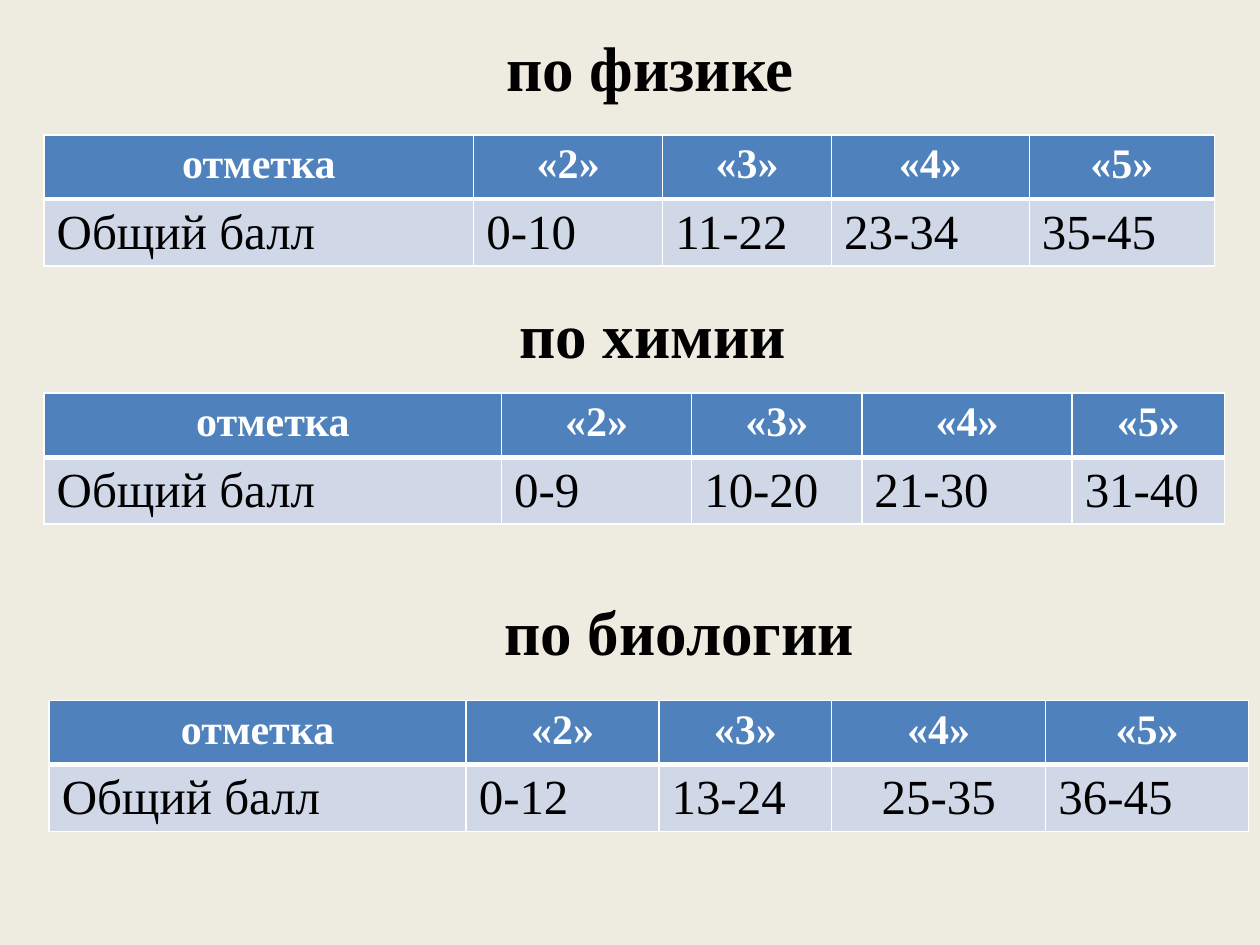
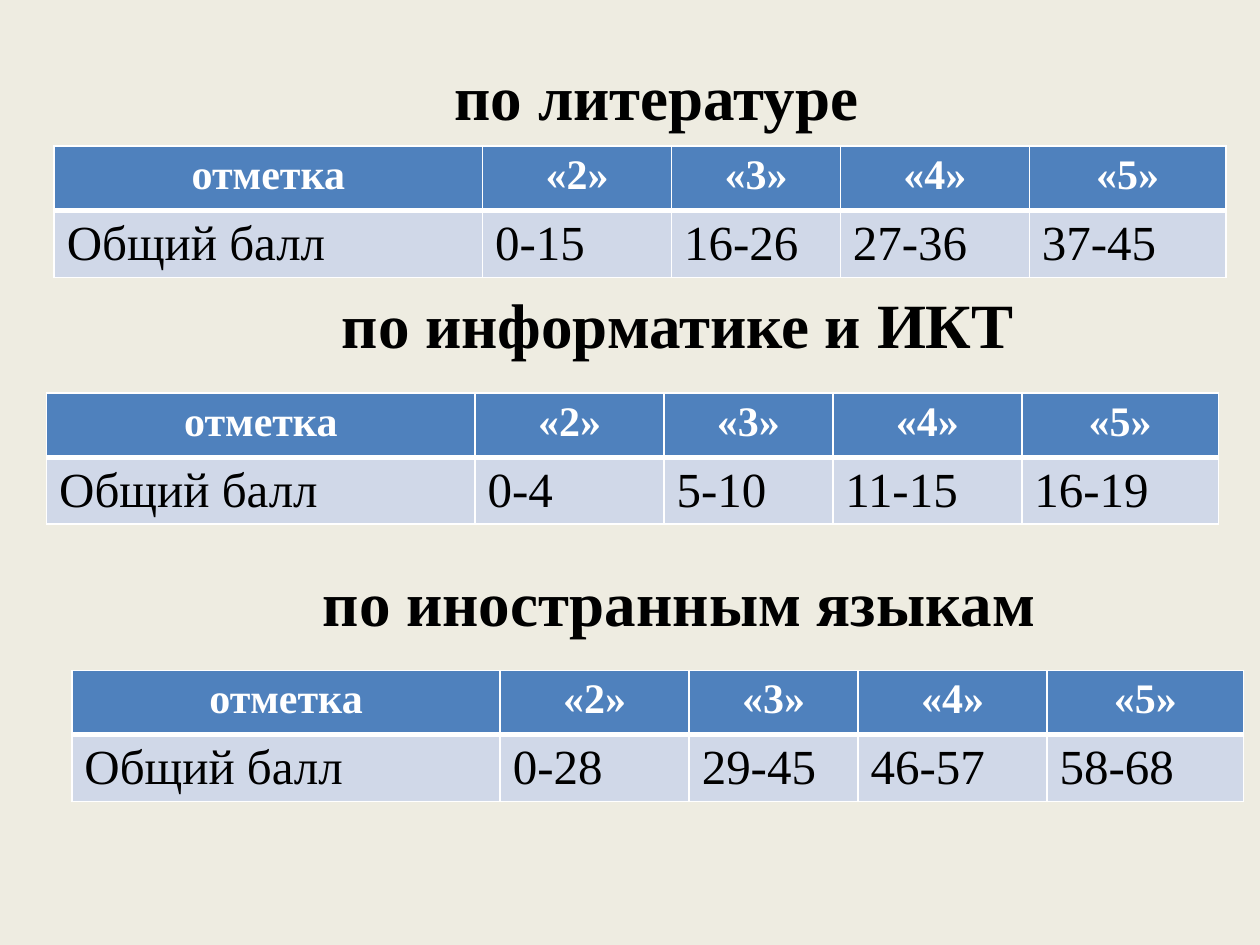
from dataclasses import dataclass

from lxml import etree
from pptx import Presentation
from pptx.dml.color import RGBColor
from pptx.enum.text import MSO_ANCHOR, MSO_AUTO_SIZE, PP_ALIGN
from pptx.oxml.ns import qn
from pptx.shapes.autoshape import Shape
from pptx.slide import Slide
from pptx.table import _Cell
from pptx.text.text import _Paragraph
from pptx.util import Inches, Length, Pt

LEFT, MID = PP_ALIGN.LEFT, PP_ALIGN.CENTER
CENTER = MSO_ANCHOR.MIDDLE
FIXED = MSO_AUTO_SIZE.NONE

CREAM = RGBColor(0xEE, 0xEC, 0xE1)
BLUE = RGBColor(0x4F, 0x81, 0xBD)
PALE = RGBColor(0xD0, 0xD8, 0xE8)
WHITE = RGBColor(0xFF, 0xFF, 0xFF)
BLACK = RGBColor(0x00, 0x00, 0x00)

FONT = "Times New Roman"
WIDE, HIGH = Inches(10), Inches(7.5)
HEAD_W, ROW_H = 85, 6.8
MARKS = ("отметка", "«2»", "«3»", "«4»", "«5»")
LABEL = "Общий балл"
EVEN = (34, 15, 13.4, 15, 15.6)


@dataclass(frozen=True)
class Scale:
    """A subject's heading and marks table, in percent of the slide."""
    name: str
    head: tuple[float, float]
    grid: tuple[float, float]
    cols: tuple[float, ...]
    points: tuple[str, ...]
    mid: tuple[int, ...] = ()


@dataclass(frozen=True)
class Page:
    """The heading height and the scales of one slide."""
    head_h: float
    scales: tuple[Scale, ...]


PAGES = (
    Page(6.27, (
        Scale("по физике", (9.1, 3.87), (3.5, 14.27), (34.1, 15, 13.4, 15.7, 14.7),
              ("0-10", "11-22", "23-34", "35-45")),
        Scale("по химии", (9.3, 32.13), (3.5, 41.6), (36.3, 15.1, 13.5, 16.7, 12.1),
              ("0-9", "10-20", "21-30", "31-40")),
        Scale("по биологии", (11.4, 63.6), (3.9, 74.13), (33.1, 15.3, 13.7, 17, 16.1),
              ("0-12", "13-24", "25-35", "36-45"), (3,)),
    )),
    Page(8.4, (
        Scale("по литературе", (9.6, 5.87), (4.3, 15.47), EVEN,
              ("0-15", "16-26", "27-36", "37-45")),
        Scale("по информатике и ИКТ", (11.3, 30), (3.7, 41.6), EVEN,
              ("0-4", "5-10", "11-15", "16-19")),
        Scale("по иностранным языкам", (11.4, 59.47), (5.7, 70.93), EVEN,
              ("0-28", "29-45", "46-57", "58-68")),
    )),
)


def across(share: float) -> Length:
    """Turn a percentage of the slide width into a length."""
    return Length(round(WIDE * share / 100))


def down(share: float) -> Length:
    """Turn a percentage of the slide height into a length."""
    return Length(round(HIGH * share / 100))


def style(para: _Paragraph, size: int, color: RGBColor, bold: bool, align: PP_ALIGN) -> None:
    """Format a paragraph and its runs."""
    para.alignment = align
    for run in para.runs:
        font = run.font
        font.name, font.size, font.bold = FONT, Pt(size), bold
        font.color.rgb = color


def put_head(box: Shape, scale: Scale, high: float) -> None:
    """Place and fill a subject heading."""
    box.left, box.top = across(scale.head[0]), down(scale.head[1])
    box.width, box.height = across(HEAD_W), down(high)
    frame = box.text_frame
    frame.text = scale.name
    frame.word_wrap = True
    frame.auto_size = FIXED
    frame.vertical_anchor = CENTER
    style(frame.paragraphs[0], 36, BLACK, True, MID)


def edge(cell: _Cell, sides: dict[str, int]) -> None:
    """Draw white cell borders of the given widths in points."""
    props = cell._tc.get_or_add_tcPr()
    for side, width in sides.items():
        line = etree.SubElement(props, qn(f"a:ln{side}"), w=str(Pt(width)))
        fill = etree.SubElement(line, qn("a:solidFill"))
        etree.SubElement(fill, qn("a:srgbClr"), val=str(WHITE))


def put_grid(slide: Slide, scale: Scale) -> None:
    """Draw the table of marks and points."""
    rows = (MARKS, (LABEL, *scale.points))
    frame = slide.shapes.add_table(
        len(rows), len(MARKS), across(scale.grid[0]), down(scale.grid[1]),
        across(sum(scale.cols)), down(ROW_H * len(rows)))
    table = frame.table
    table.first_row = table.horz_banding = False
    for col, share in zip(table.columns, scale.cols):
        col.width = across(share)
    for r, row in enumerate(rows):
        top = r == 0
        for c, text in enumerate(row):
            cell = table.cell(r, c)
            cell.text = text
            edge(cell, {"L": 1, "R": 1, "T": 1 if top else 3, "B": 3 if top else 1})
            cell.fill.solid()
            cell.fill.fore_color.rgb = BLUE if top else PALE
            para = cell.text_frame.paragraphs[0]
            if top:
                style(para, 24, WHITE, True, MID)
            else:
                style(para, 28, BLACK, False, MID if c in scale.mid else LEFT)


def main() -> None:
    """Build and save the slides."""
    deck = Presentation()
    deck.slide_width, deck.slide_height = WIDE, HIGH
    back = deck.slide_master.background.fill
    back.solid()
    back.fore_color.rgb = CREAM
    plan = deck.slide_layouts.get_by_name("Title Only")
    for page in PAGES:
        slide = deck.slides.add_slide(plan)
        for i, scale in enumerate(page.scales):
            box = slide.shapes.add_textbox(0, 0, 0, 0) if i else slide.shapes.title
            put_head(box, scale, page.head_h)
            put_grid(slide, scale)
    deck.save("out.pptx")


if __name__ == "__main__":
    main()
